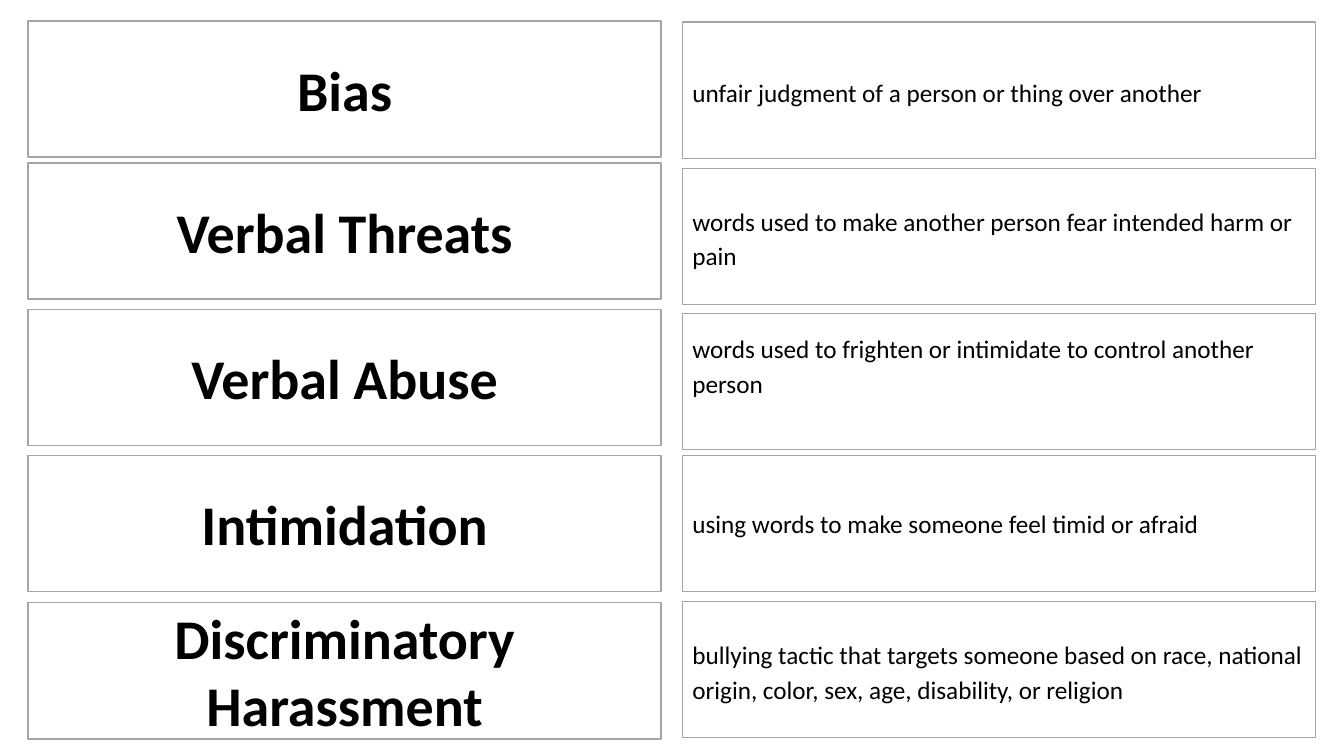
from pptx import Presentation
from pptx.dml.color import RGBColor
from pptx.enum.shapes import MSO_SHAPE as Shape
from pptx.enum.text import MSO_ANCHOR as Anchor, PP_ALIGN as Align
from pptx.util import Cm, Pt

WHITE = RGBColor(0xFF, 0xFF, 0xFF)
BLACK = RGBColor(0x00, 0x00, 0x00)
GRAY = RGBColor(0xA5, 0xA5, 0xA5)

TERM_LEFT, MEANING_LEFT = 0.71, 17.2
CARD_WIDTH, CARD_HEIGHT = 15.95, 3.43
INSET = 0.13
RAISED_INSET = 1.02

CARDS = [
    ("Bias", 0.53,
     "unfair judgment of a person or thing over another", 0.56, 1.15, INSET),
    ("Verbal Threats", 4.11,
     "words used to make another person fear intended harm or pain", 4.24, 1.15, INSET),
    ("Verbal Abuse", 7.8,
     "words used to frighten or intimidate to control another person", 7.9, 1.15, RAISED_INSET),
    ("Intimidation", 11.48,
     "using words to make someone feel timid or afraid", 11.48, 1.0, INSET),
    ("Discriminatory Harassment", 15.19,
     "bullying tactic that targets someone based on race, national origin, "
     "color, sex, age, disability, or religion", 15.16, 1.15, INSET),
]


class CardSlide:
    font_name = "Calibri"

    def __init__(self, prs):
        self.s = prs.slides.add_slide(prs.slide_layouts[6])

    def card(self, left, top, text, size, align, bold=False, spacing=1.0, bottom=INSET):
        sp = self.s.shapes.add_shape(
            Shape.RECTANGLE, Cm(left), Cm(top), Cm(CARD_WIDTH), Cm(CARD_HEIGHT))
        sp.shadow.inherit = False
        sp.fill.solid()
        sp.fill.fore_color.rgb = WHITE
        sp.line.color.rgb = GRAY
        sp.line.width = Pt(1)
        tf = sp.text_frame
        tf.word_wrap = True
        tf.vertical_anchor = Anchor.MIDDLE
        tf.margin_bottom = Cm(bottom)
        p = tf.paragraphs[0]
        p.text = text
        p.alignment = align
        p.line_spacing = spacing
        p.font.name = self.font_name
        p.font.size = Pt(size)
        p.font.bold = bold
        p.font.color.rgb = BLACK

    def term(self, top, text):
        self.card(TERM_LEFT, top, text, 40, Align.CENTER, bold=True)

    def meaning(self, top, text, spacing, bottom):
        self.card(MEANING_LEFT, top, text, 18, Align.LEFT, spacing=spacing, bottom=bottom)


def main():
    prs = Presentation()
    prs.slide_width, prs.slide_height = Cm(33.87), Cm(19.05)
    slide = CardSlide(prs)
    for term, term_top, meaning, meaning_top, spacing, bottom in CARDS:
        slide.term(term_top, term)
        slide.meaning(meaning_top, meaning, spacing, bottom)
    prs.save("out.pptx")


if __name__ == "__main__":
    main()
